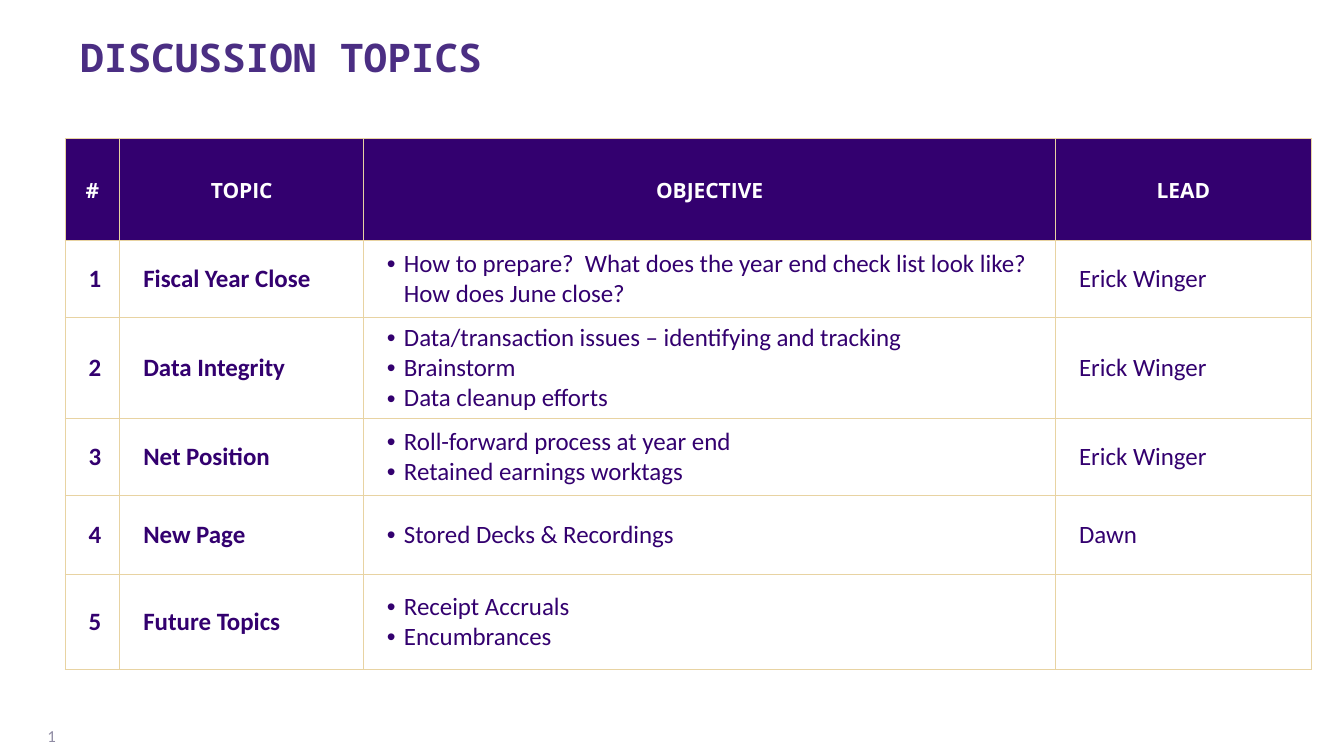
import pptx
import pptx.util
import pptx.dml.color
import pptx.enum.text
import pptx.oxml.ns
from lxml import etree

Pt = pptx.util.Pt
ALIGN = pptx.enum.text.PP_ALIGN
ANCHOR = pptx.enum.text.MSO_ANCHOR

# Content
TITLE = "DISCUSSION TOPICS"
PAGE = "1"
HEADS = ["#", "TOPIC", "OBJECTIVE\u00a0".strip(), "LEAD"]
TOPICS = [
    ("Fiscal Year Close",
     ["How to prepare?  What does the year end check list look like?  "
      "How does June close?"], "Erick Winger"),
    ("Data Integrity",
     ["Data/transaction issues – identifying and tracking",
      "Brainstorm", "Data cleanup efforts"], "Erick Winger"),
    ("Net Position",
     ["Roll-forward process at year end", "Retained earnings worktags"],
     "Erick Winger"),
    ("New Page", ["Stored Decks & Recordings"], "Dawn"),
    ("Future Topics", ["Receipt Accruals", "Encumbrances"], ""),
]

# Layout, in points
WIDE, HIGH = 1024, 576
LEFT, TOP = 49.7, 105.8
COLS = [41.5, 186, 527, 195]
ROWS = [77.8, 58.5, 77, 58.5, 60.5, 72]

# Formats
PURPLE, GOLD = "33006F", "E8D3A2"
HEAD = {"name": "Open Sans", "size": Pt(16), "bold": True, "color": "FFFFFF"}
BODY = {"name": "Calibri", "size": Pt(19), "bold": False, "color": PURPLE}
BOLD = {**BODY, "bold": True}
MAIN = {"name": "Noto Sans Mono", "size": Pt(30), "bold": True,
        "color": "4B2E83"}
FOOT = {"name": "Calibri", "size": Pt(12.8), "bold": False, "color": "908CA4"}


def paint(target, code):
    target.rgb = pptx.dml.color.RGBColor.from_string(code)


def write(frame, lines, form, align=ALIGN.LEFT, indent=0, hang=0):
    """Fill a text frame, one paragraph a line; hang adds bullets."""
    for i, line in enumerate(lines):
        para = frame.paragraphs[0] if i == 0 else frame.add_paragraph()
        para.alignment = align
        props = para._p.get_or_add_pPr()
        props.set("marL", str(int(Pt(indent))))
        props.set("indent", str(-int(Pt(hang))))
        if hang:
            font = etree.SubElement(props, pptx.oxml.ns.qn("a:buFont"))
            font.set("typeface", "Arial")
            mark = etree.SubElement(props, pptx.oxml.ns.qn("a:buChar"))
            mark.set("char", "•")
        run = para.add_run()
        run.text = line
        for key, value in form.items():
            if key == "color":
                paint(run.font.color, value)
            else:
                setattr(run.font, key, value)


def place(shape, left, top, width, height):
    box = {"left": left, "top": top, "width": width, "height": height}
    for key, value in box.items():
        setattr(shape, key, Pt(value))


def style(cell, inset, fill=None):
    """Set the margins, gold borders and fill of a cell."""
    cell.vertical_anchor = ANCHOR.MIDDLE
    sides = {"left": inset, "right": 0, "top": 0, "bottom": 0}
    for side, value in sides.items():
        setattr(cell, "margin_" + side, Pt(value))
    props = cell._tc.get_or_add_tcPr()
    for side in "LRTB":
        line = etree.SubElement(props, pptx.oxml.ns.qn("a:ln" + side))
        line.set("w", str(int(Pt(1))))
        solid = etree.SubElement(line, pptx.oxml.ns.qn("a:solidFill"))
        color = etree.SubElement(solid, pptx.oxml.ns.qn("a:srgbClr"))
        color.set("val", GOLD)
    if fill:
        cell.fill.solid()
        paint(cell.fill.fore_color, fill)
    else:
        cell.fill.background()


deck = pptx.Presentation()
deck.slide_width, deck.slide_height = Pt(WIDE), Pt(HIGH)
slide = deck.slides.add_slide(deck.slide_layouts[5])

# Title
title = slide.shapes.title
place(title, 54, 26, 896, 37.5)
frame = title.text_frame
frame.auto_size = pptx.enum.text.MSO_AUTO_SIZE.NONE
frame.vertical_anchor = ANCHOR.TOP
write(frame, [TITLE], MAIN)
frame.paragraphs[0].line_spacing = 0.9

# Page number
foot = slide.shapes.add_textbox(Pt(13.7), Pt(545), Pt(36), Pt(31))
foot.text_frame.word_wrap = True
foot.text_frame.vertical_anchor = ANCHOR.MIDDLE
write(foot.text_frame, [PAGE], FOOT, ALIGN.RIGHT)

# Table grid
table = slide.shapes.add_table(
    len(ROWS), len(COLS), Pt(LEFT), Pt(TOP), Pt(sum(COLS)), Pt(sum(ROWS))).table
table.first_row = table.horz_banding = False
for col, width in zip(table.columns, COLS):
    col.width = Pt(width)
for row, height in zip(table.rows, ROWS):
    row.height = Pt(height)

# Header row
for cell, head in zip(table.rows[0].cells, HEADS):
    style(cell, 0, PURPLE)
    write(cell.text_frame, [head], HEAD, ALIGN.CENTER)

# Topic rows
for num, (topic, goals, lead) in enumerate(TOPICS, 1):
    parts = [
        ([str(num)], BOLD, ALIGN.CENTER),
        ([topic], BOLD, ALIGN.LEFT, 14.4),
        (goals, BODY, ALIGN.LEFT, 27, 13),
        ([lead] if lead else [], BODY, ALIGN.LEFT, 14.4),
    ]
    for cell, part in zip(table.rows[num].cells, parts):
        style(cell, 3.6)
        write(cell.text_frame, *part)

deck.save("out.pptx")
